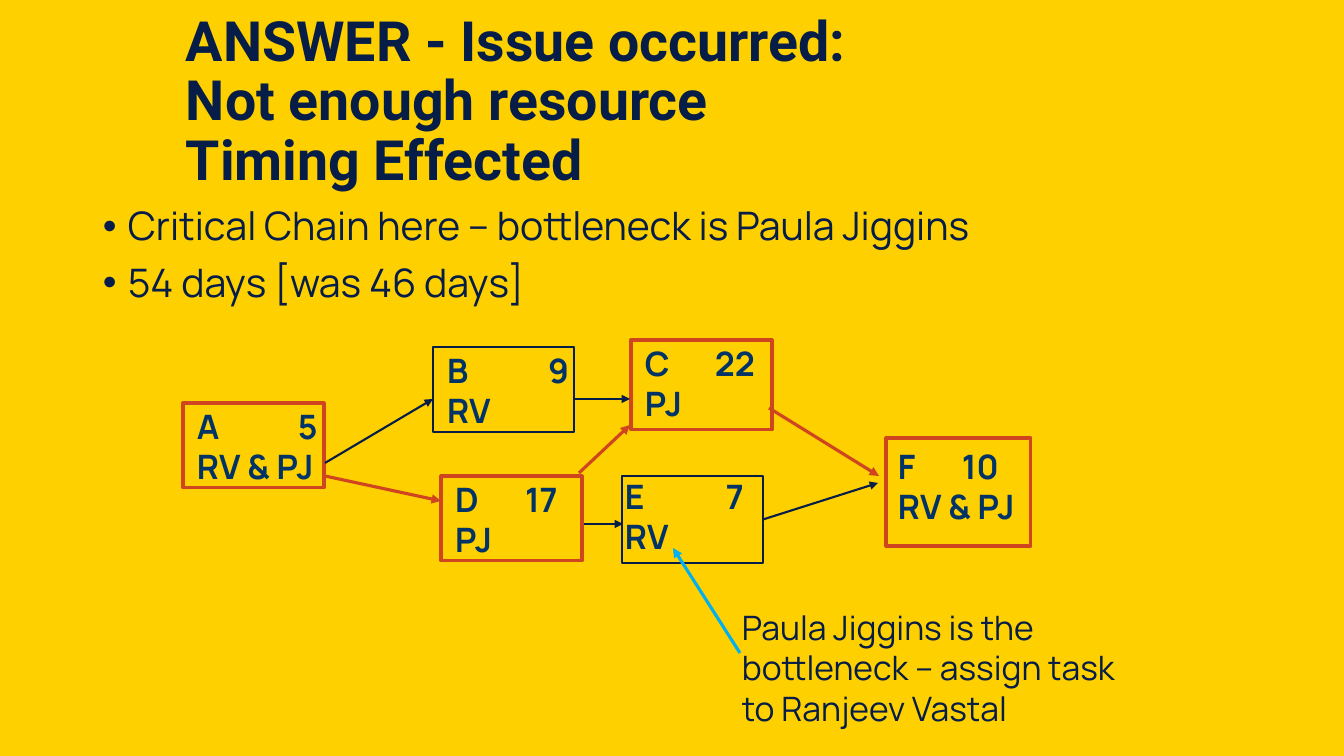
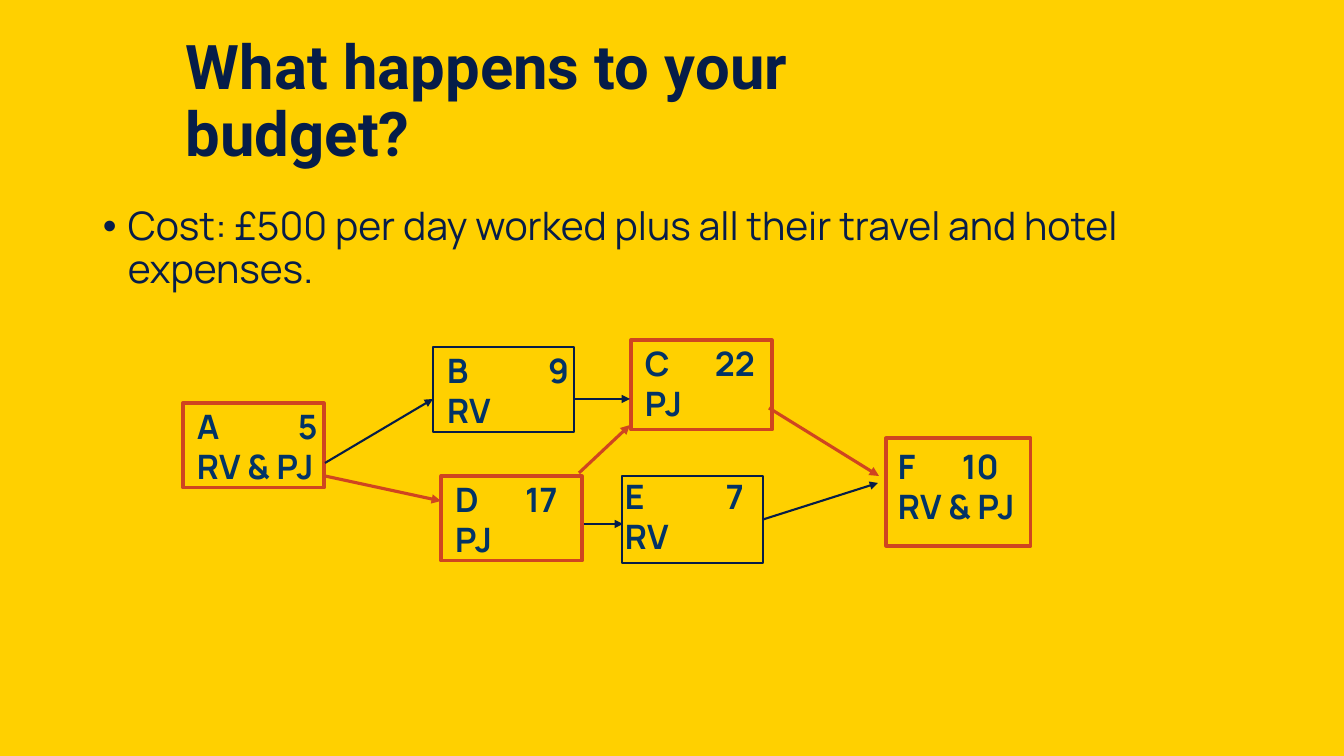
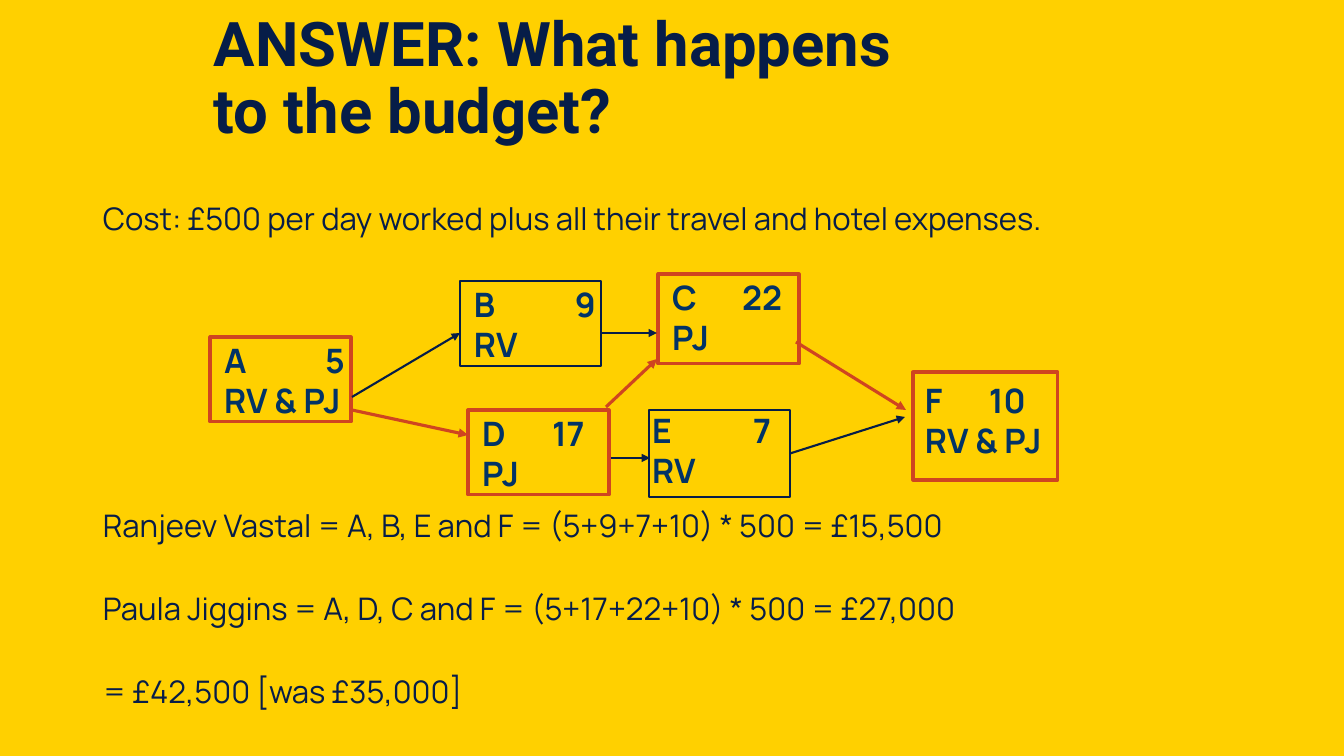
from dataclasses import dataclass

from lxml import etree
from pptx import Presentation
from pptx.dml.color import RGBColor
from pptx.enum.shapes import MSO_CONNECTOR, MSO_SHAPE
from pptx.enum.text import MSO_ANCHOR, PP_ALIGN
from pptx.oxml.ns import qn
from pptx.util import Emu, Pt

RECTANGLE = MSO_SHAPE.RECTANGLE
STRAIGHT = MSO_CONNECTOR.STRAIGHT
TOP, MIDDLE = MSO_ANCHOR.TOP, MSO_ANCHOR.MIDDLE
LEFT = PP_ALIGN.LEFT
RIGHT_SIDE = 3

SLIDE_WIDTH, SLIDE_HEIGHT = 1344, 756
EMU_PER_PX = 12192000 / SLIDE_WIDTH

YELLOW = "FFD000"
NAVY = "061D48"
BODY_NAVY = "071D49"
LABEL_BLUE = "023366"
CRITICAL_RED = "CF4520"
NOTE_BLUE = "00B0F0"
TITLE_FONT, BODY_FONT = "Roboto", "Manrope"

BODY_LEFT, BODY_TOP, BODY_WIDTH = 93, 202, 1159
BULLET_INDENT = 25


@dataclass(frozen=True)
class TextStyle:
    font: str
    size: float
    colour: str
    bold: bool = False
    line_spacing: float = 1.0
    space_before: float = 0
    bullet: bool = False


@dataclass(frozen=True)
class Area:
    left: int
    top: int
    width: int
    height: int


@dataclass(frozen=True)
class Task:
    name: str
    days: str
    people: str
    area: Area
    days_tab: int
    critical: bool = False
    inset_left: int = 14
    inset_top: int = 3


@dataclass(frozen=True)
class Arrow:
    start: tuple[int, int]
    end: tuple[int, int]
    critical: bool = False
    source: str = ""


TITLE = TextStyle(TITLE_FONT, 44, NAVY, bold=True, line_spacing=0.9)
LONG_TITLE = TextStyle(TITLE_FONT, 39.6, NAVY, bold=True, line_spacing=0.9)
BULLETS = TextStyle(BODY_FONT, 28, BODY_NAVY, line_spacing=0.9, space_before=10, bullet=True)
COSTS = TextStyle(BODY_FONT, 22.2, BODY_NAVY, line_spacing=0.8, space_before=38)
NOTE = TextStyle(BODY_FONT, 24, NAVY)
LABEL = TextStyle(BODY_FONT, 24, LABEL_BLUE, bold=True)

TITLE_AREA = Area(176, 30, 736, 146)
BUDGET_TITLE_AREA = Area(204, 7, 725, 146)
BODY_AREA = Area(BODY_LEFT, BODY_TOP, BODY_WIDTH, 120)

TASKS = [
    Task("A", "5", "RV & PJ", Area(183, 403, 141, 85), 101, critical=True),
    Task("B", "9", "RV", Area(433, 347, 141, 85), 101),
    Task("C", "22", "PJ", Area(631, 340, 141, 90), 70, critical=True),
    Task("D", "17", "PJ", Area(441, 476, 141, 85), 70, critical=True),
    Task("E", "7", "RV", Area(622, 476, 141, 87), 101, inset_left=3, inset_top=0),
    Task("F", "10", "RV & PJ", Area(886, 438, 145, 108), 64, critical=True,
         inset_left=12, inset_top=8),
]
ARROWS = [
    Arrow((325, 463), (433, 399)),
    Arrow((325, 476), (441, 501), critical=True),
    Arrow((769, 408), (879, 476), critical=True),
    Arrow((575, 399), (630, 399)),
    Arrow((584, 524), (623, 524)),
    Arrow((763, 520), (878, 483), source="E"),
    Arrow((579, 473), (630, 425), critical=True),
]


def px(length: float) -> Emu:
    return Emu(round(length * EMU_PER_PX))


def colour(value: str) -> RGBColor:
    return RGBColor.from_string(value)


def place(area: Area) -> tuple[Emu, Emu, Emu, Emu]:
    return px(area.left), px(area.top), px(area.width), px(area.height)


def add_span(paragraph, text: str, style: TextStyle) -> None:
    span = paragraph.add_run()
    span.text = text
    span.font.name = style.font
    span.font.size = Pt(style.size)
    span.font.bold = style.bold
    span.font.color.rgb = colour(style.colour)


def add_bullet(paragraph) -> None:
    properties = paragraph._p.get_or_add_pPr()
    properties.set("marL", str(px(BULLET_INDENT)))
    properties.set("indent", str(-px(BULLET_INDENT)))
    etree.SubElement(properties, qn("a:buFont"), typeface="Arial")
    etree.SubElement(properties, qn("a:buChar"), char="•")


def add_tab_stop(paragraph, position: int) -> None:
    tabs = etree.SubElement(paragraph._p.get_or_add_pPr(), qn("a:tabLst"))
    etree.SubElement(tabs, qn("a:tab"), pos=str(px(position)), algn="l")


def write_paragraphs(frame, texts: list[str], style: TextStyle) -> None:
    for index, text in enumerate(texts):
        paragraph = frame.add_paragraph() if index else frame.paragraphs[0]
        if style.bullet:
            add_bullet(paragraph)
        paragraph.alignment = LEFT
        paragraph.line_spacing = style.line_spacing
        paragraph.space_before = Pt(style.space_before if index else 0)
        for line_index, line in enumerate(text.split("\n")):
            if line_index:
                paragraph.add_line_break()
            add_span(paragraph, line, style)


def add_text(page, area: Area, texts: list[str], style: TextStyle, anchor=TOP) -> None:
    frame = page.shapes.add_textbox(*place(area)).text_frame
    frame.word_wrap = True
    frame.vertical_anchor = anchor
    write_paragraphs(frame, texts, style)


def add_arrow(page, start: tuple[int, int], end: tuple[int, int], line_colour: str, width: float):
    connector = page.shapes.add_connector(STRAIGHT, *map(px, start + end))
    connector.line.color.rgb = colour(line_colour)
    connector.line.width = Pt(width)
    etree.SubElement(connector.line._get_or_add_ln(), qn("a:tailEnd"), type="triangle")
    etree.SubElement(connector._element.spPr, qn("a:effectLst"))
    return connector


def add_task(page, task: Task, shift_x: int, shift_y: int):
    area = Area(task.area.left + shift_x, task.area.top + shift_y,
                task.area.width, task.area.height)
    box = page.shapes.add_shape(RECTANGLE, *place(area))
    box.shadow.inherit = False
    box.fill.background()
    box.line.color.rgb = colour(CRITICAL_RED if task.critical else NAVY)
    box.line.width = Pt(2.25 if task.critical else 1)
    frame = box.text_frame
    frame.word_wrap = True
    frame.vertical_anchor = TOP
    frame.margin_left, frame.margin_top = px(task.inset_left), px(task.inset_top)
    frame.margin_right = frame.margin_bottom = 0
    add_tab_stop(frame.paragraphs[0], task.days_tab)
    write_paragraphs(frame, [f"{task.name}\t{task.days}", task.people], LABEL)
    return box


def add_network(page, shift_x: int = 0, shift_y: int = 0) -> None:
    boxes = {task.name: add_task(page, task, shift_x, shift_y) for task in TASKS}
    for arrow in ARROWS:
        start = (arrow.start[0] + shift_x, arrow.start[1] + shift_y)
        end = (arrow.end[0] + shift_x, arrow.end[1] + shift_y)
        connector = add_arrow(page, start, end,
                              CRITICAL_RED if arrow.critical else NAVY,
                              2.25 if arrow.critical else 1.5)
        if arrow.source:
            connector.begin_connect(boxes[arrow.source], RIGHT_SIDE)


def add_page(deck, title: str, area: Area = TITLE_AREA, style: TextStyle = TITLE):
    page = deck.slides.add_slide(deck.slide_layouts[6])
    add_text(page, area, [title], style, MIDDLE)
    return page


def build_resource_answer(deck) -> None:
    title = "ANSWER - Issue occurred:\nNot enough resource\nTiming Effected"
    page = add_page(deck, title, style=LONG_TITLE)
    add_text(page, BODY_AREA, ["Critical Chain here – bottleneck is Paula Jiggins",
                               "54 days [was 46 days]"], BULLETS)
    add_network(page)
    add_arrow(page, (740, 653), (673, 548), NOTE_BLUE, 2.25)
    add_text(page, Area(732, 602, 395, 132),
             ["Paula Jiggins is the bottleneck – assign task to Ranjeev Vastal"], NOTE)


def build_budget_question(deck, cost_rule: str) -> None:
    page = add_page(deck, "What happens to your budget?")
    add_text(page, BODY_AREA, [cost_rule], BULLETS)
    add_network(page)


def build_budget_answer(deck, cost_rule: str) -> None:
    page = add_page(deck, "ANSWER: What happens to the budget?", BUDGET_TITLE_AREA)
    add_text(page, Area(BODY_LEFT, BODY_TOP, BODY_WIDTH, 45), [cost_rule], COSTS)
    add_network(page, 27, -66)
    add_text(page, Area(BODY_LEFT, 509, BODY_WIDTH, 240), [
        "Ranjeev Vastal = A, B, E and F = (5+9+7+10) * 500 = £15,500",
        "Paula Jiggins = A, D, C and F = (5+17+22+10) * 500 = £27,000",
        "= £42,500 [was £35,000]",
    ], COSTS)


def main() -> None:
    deck = Presentation()
    deck.slide_width, deck.slide_height = px(SLIDE_WIDTH), px(SLIDE_HEIGHT)
    background = deck.slide_master.background.fill
    background.solid()
    background.fore_color.rgb = colour(YELLOW)
    cost_rule = "Cost: £500 per day worked plus all their travel and hotel expenses."
    build_resource_answer(deck)
    build_budget_question(deck, cost_rule)
    build_budget_answer(deck, cost_rule)
    deck.save("out.pptx")


if __name__ == "__main__":
    main()
